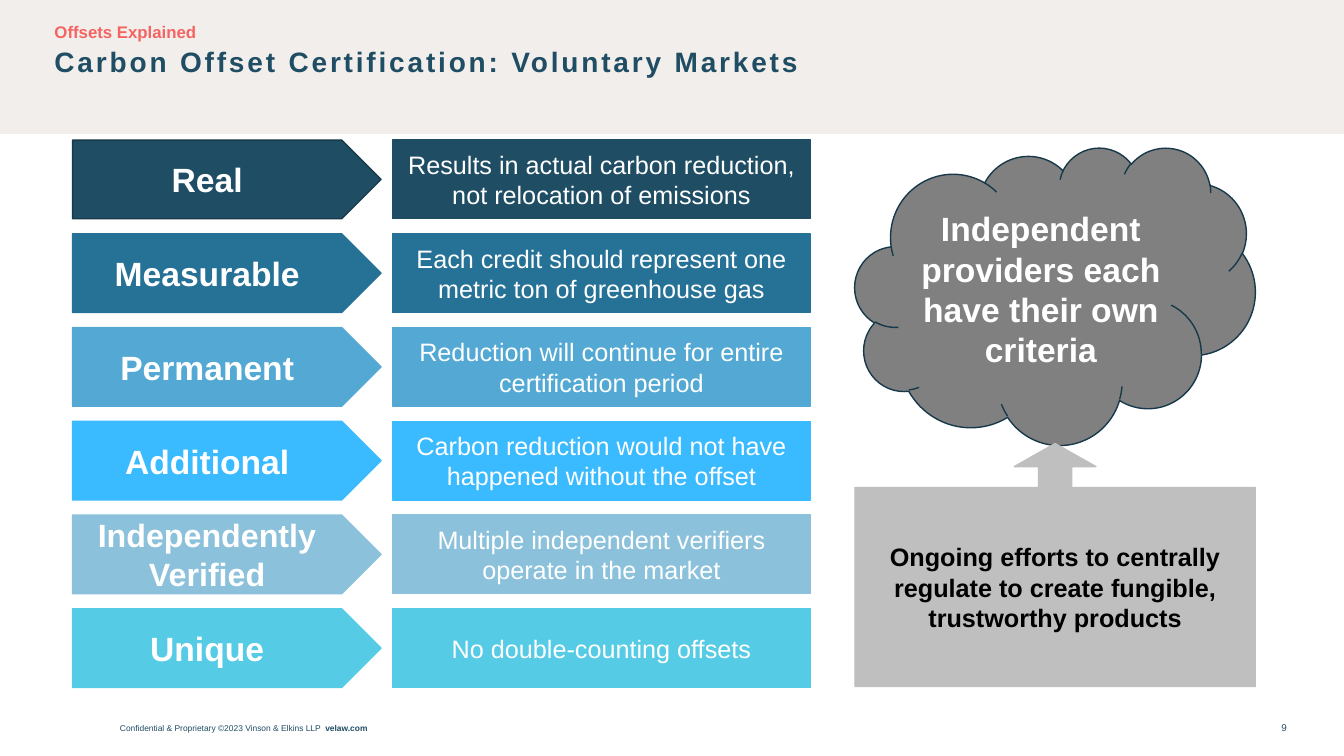
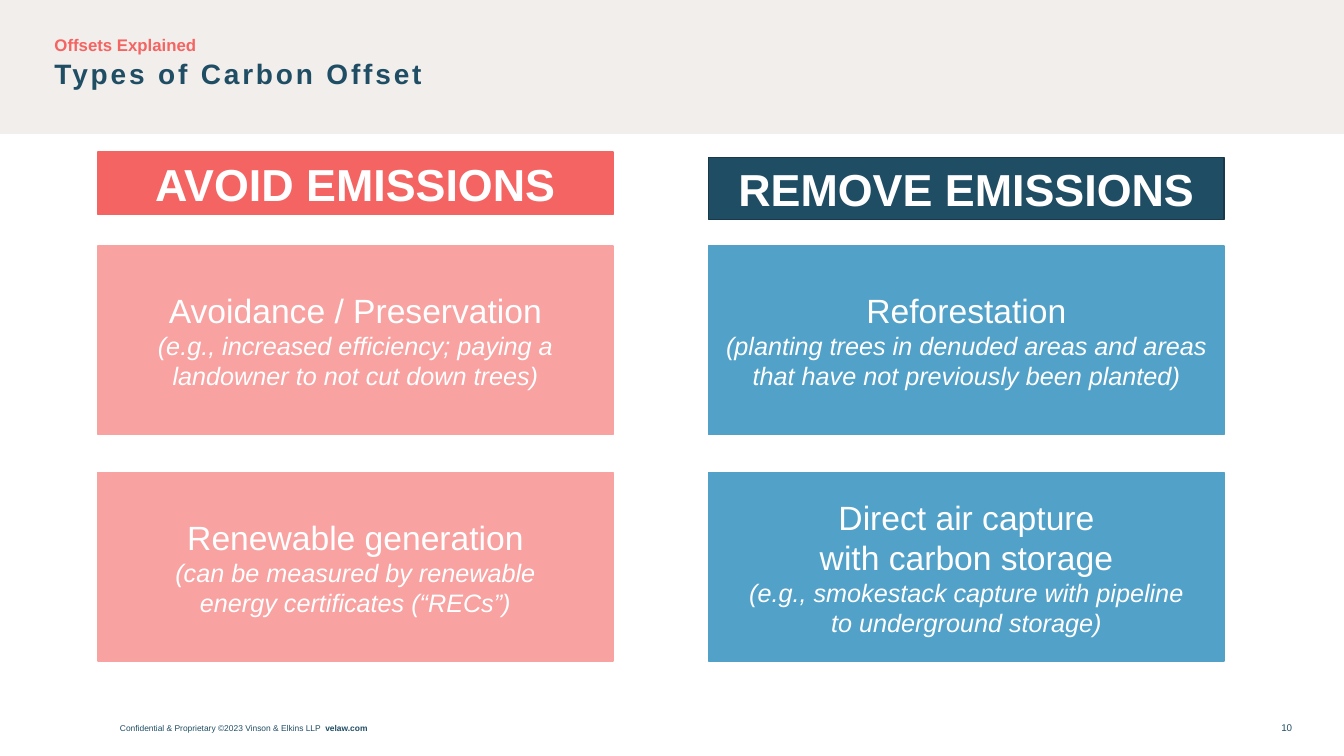
from dataclasses import dataclass

from lxml import etree
from pptx import Presentation
from pptx.dml.color import RGBColor
from pptx.enum.shapes import MSO_SHAPE as Shape
from pptx.enum.text import MSO_ANCHOR as Anchor, MSO_AUTO_SIZE as AutoSize, PP_ALIGN as Align
from pptx.oxml.ns import qn
from pptx.util import Inches, Pt


@dataclass(frozen=True)
class Theme:
    font: str = "Arial"
    # Colours
    band: str = "F2EEEB"
    navy: str = "1F4D64"
    navy_edge: str = "17394A"
    coral: str = "F46462"
    coral_light: str = "F8A2A1"
    blue: str = "51A1C9"
    cloud: str = "808080"
    callout: str = "BFBFBF"
    white: str = "FFFFFF"
    black: str = "000000"
    ramp: tuple = ("1F4D64", "267196", "53A9D4", "3ABAFF", "8BC1DB", "56CBE5")
    # Type sizes
    banner: int = 32
    label: int = 24
    label_long: int = 23
    title: int = 20
    text: int = 18
    kicker: int = 12
    number: int = 7
    footer: int = 6


THEME = Theme()
WIDTH, HEIGHT = 13.33, 7.5


def color(code):
    return RGBColor.from_string(code)


def add_span(para, text, size, code, bold=False, italic=False):
    span = para.add_run()
    span.text = text
    font = span.font
    font.name, font.size, font.bold, font.italic = THEME.font, Pt(size), bold, italic
    font.color.rgb = color(code)
    return span


def place(box, left, top, width, height):
    box.left, box.top = Inches(left), Inches(top)
    box.width, box.height = Inches(width), Inches(height)


def clear_margins(frame):
    frame.margin_left = frame.margin_right = frame.margin_top = frame.margin_bottom = 0


def add_block(page, kind, bounds, fill, edge=None, adjustments=()):
    """Filled shape with a thin outline and a centred, empty text frame."""
    block = page.shapes.add_shape(kind, *map(Inches, bounds))
    block.shadow.inherit = False
    block.fill.solid()
    block.fill.fore_color.rgb = color(fill)
    block.line.color.rgb = color(edge or fill)
    block.line.width = Pt(1)
    for index, value in enumerate(adjustments):
        block.adjustments[index] = value
    block.text_frame.word_wrap = True
    block.text_frame.vertical_anchor = Anchor.MIDDLE
    return block


def write_centred(block, lines):
    """Each line is (text, size, colour, bold, italic) and becomes a paragraph."""
    frame = block.text_frame
    for index, line in enumerate(lines):
        para = frame.add_paragraph() if index else frame.paragraphs[0]
        para.alignment = Align.CENTER
        add_span(para, *line)


# Shared parts of every page
def add_heading(box, bounds, anchor, text, size, code):
    place(box, *bounds)
    frame = box.text_frame
    clear_margins(frame)
    frame.word_wrap = True
    frame.auto_size = AutoSize.NONE
    frame.vertical_anchor = anchor
    para = frame.paragraphs[0]
    para.alignment = Align.LEFT
    para.space_before = Pt(0)
    return para, add_span(para, text, size, code, bold=True)


def add_header(page, title, top):
    band = add_block(page, Shape.RECTANGLE, (0, 0, WIDTH, 1.33), THEME.band)
    band.line.fill.background()
    page.shapes.element.insert(2, band.element)

    span = add_heading(page.shapes.title, (0.54, top + 0.22, 11.87, 0.34),
                       Anchor.TOP, title, THEME.title, THEME.navy)[1]
    span.font._element.set("spc", "200")

    para = add_heading(page.placeholders[1], (0.54, top, 7.26, 0.2), Anchor.MIDDLE,
                       "Offsets Explained", THEME.kicker, THEME.coral)[0]
    properties = para._p.get_or_add_pPr()
    properties.set("marL", "0")
    properties.set("indent", "0")
    etree.SubElement(properties, qn("a:buNone"))


def add_footer(page, number):
    notice = page.shapes.add_textbox(*map(Inches, (1.19, 7.17, 4.08, 0.1)))
    clear_margins(notice.text_frame)
    notice.text_frame.word_wrap = True
    para = notice.text_frame.paragraphs[0]
    add_span(para, "Confidential & Proprietary ©2023 Vinson & Elkins LLP  ", THEME.footer, THEME.navy)
    add_span(para, "velaw.com", THEME.footer, THEME.navy, bold=True)

    counter = page.shapes.add_textbox(*map(Inches, (12.61, 7.11, 0.32, 0.22)))
    counter.text_frame.word_wrap = False
    add_span(counter.text_frame.paragraphs[0], str(number), THEME.number, THEME.navy)


def add_page(deck, title, header_top, number):
    page = deck.slides.add_slide(deck.slide_layouts[1])
    add_header(page, title, header_top)
    add_footer(page, number)
    return page


# Certification page
CRITERIA = (
    ("Real", "Results in actual carbon reduction, not relocation of emissions"),
    ("Measurable", "Each credit should represent one metric ton of greenhouse gas"),
    ("Permanent", "Reduction will continue for entire certification period"),
    ("Additional", "Carbon reduction would not have happened without the offset"),
    ("Independently Verified", "Multiple independent verifiers operate in the market"),
    ("Unique", "No double-counting offsets"),
)


def add_criteria(page, left, top):
    pitch, height = 0.93, 0.78
    for index, ((name, meaning), fill) in enumerate(zip(CRITERIA, THEME.ramp)):
        row_top = top + index * pitch
        edge = THEME.navy_edge if fill == THEME.navy else fill
        size = THEME.label_long if " " in name else THEME.label
        arrow = add_block(page, Shape.RIGHT_ARROW, (left, row_top, 3.06, height),
                          fill, edge, (1, 0.5))
        write_centred(arrow, [(name, size, THEME.white, True)])
        panel = add_block(page, Shape.RECTANGLE, (left + 3.17, row_top, 4.15, height), fill)
        write_centred(panel, [(meaning, THEME.text, THEME.white)])


def add_providers(page, left, top, width):
    cloud = add_block(page, Shape.CLOUD, (left, top, width, 2.95), THEME.cloud, THEME.navy_edge)
    write_centred(cloud, [("Independent providers each have their own criteria",
                           THEME.label, THEME.white, True)])
    callout = add_block(page, Shape.UP_ARROW_CALLOUT, (left, top + 2.94, width, 2.41),
                        THEME.callout, adjustments=(0.136, 0.168, 0.095, 0.819))
    write_centred(callout, [("Ongoing efforts to centrally regulate to create fungible, "
                             "trustworthy products", THEME.text, THEME.black, True)])


def build_certification(deck):
    page = add_page(deck, "Carbon Offset Certification: Voluntary Markets", 0.22, 9)
    add_criteria(page, 0.72, 1.39)
    add_providers(page, 8.48, 1.46, 3.97)


# Offset types page: each card holds heading lines and example lines
AVOID = (
    (("Avoidance / Preservation",),
     ("(e.g., increased efficiency; paying a", "landowner to not cut down trees)")),
    (("Renewable generation",),
     ("(can be measured by renewable", "energy certificates (“RECs”)")),
)
REMOVE = (
    (("Reforestation",),
     ("(planting trees in denuded areas and areas that have not previously been planted)",)),
    (("Direct air capture", "with carbon storage"),
     ("(e.g., smokestack capture with pipeline", "to underground storage)")),
)


def add_type_column(page, left, banner_top, name, cards, banner_fill, banner_edge, card_fill):
    width = 5.11
    banner = add_block(page, Shape.RECTANGLE, (left, banner_top, width, 0.62),
                       banner_fill, banner_edge)
    write_centred(banner, [(name, THEME.banner, THEME.white, True)])
    for index, (headings, examples) in enumerate(cards):
        card = add_block(page, Shape.RECTANGLE, (left, 2.44 + index * 2.25, width, 1.87), card_fill)
        lines = [(text, THEME.label, THEME.white) for text in headings]
        lines += [(text, THEME.text, THEME.white, False, True) for text in examples]
        write_centred(card, lines)


def build_types(deck):
    page = add_page(deck, "Types of Carbon Offset", 0.34, 10)
    add_type_column(page, 0.97, 1.51, "AVOID EMISSIONS", AVOID,
                    THEME.coral, THEME.coral, THEME.coral_light)
    add_type_column(page, 7.03, 1.56, "REMOVE EMISSIONS", REMOVE,
                    THEME.navy, THEME.navy_edge, THEME.blue)


def main():
    deck = Presentation()
    deck.slide_width, deck.slide_height = Inches(WIDTH), Inches(HEIGHT)
    build_certification(deck)
    build_types(deck)
    deck.save("out.pptx")


if __name__ == "__main__":
    main()
